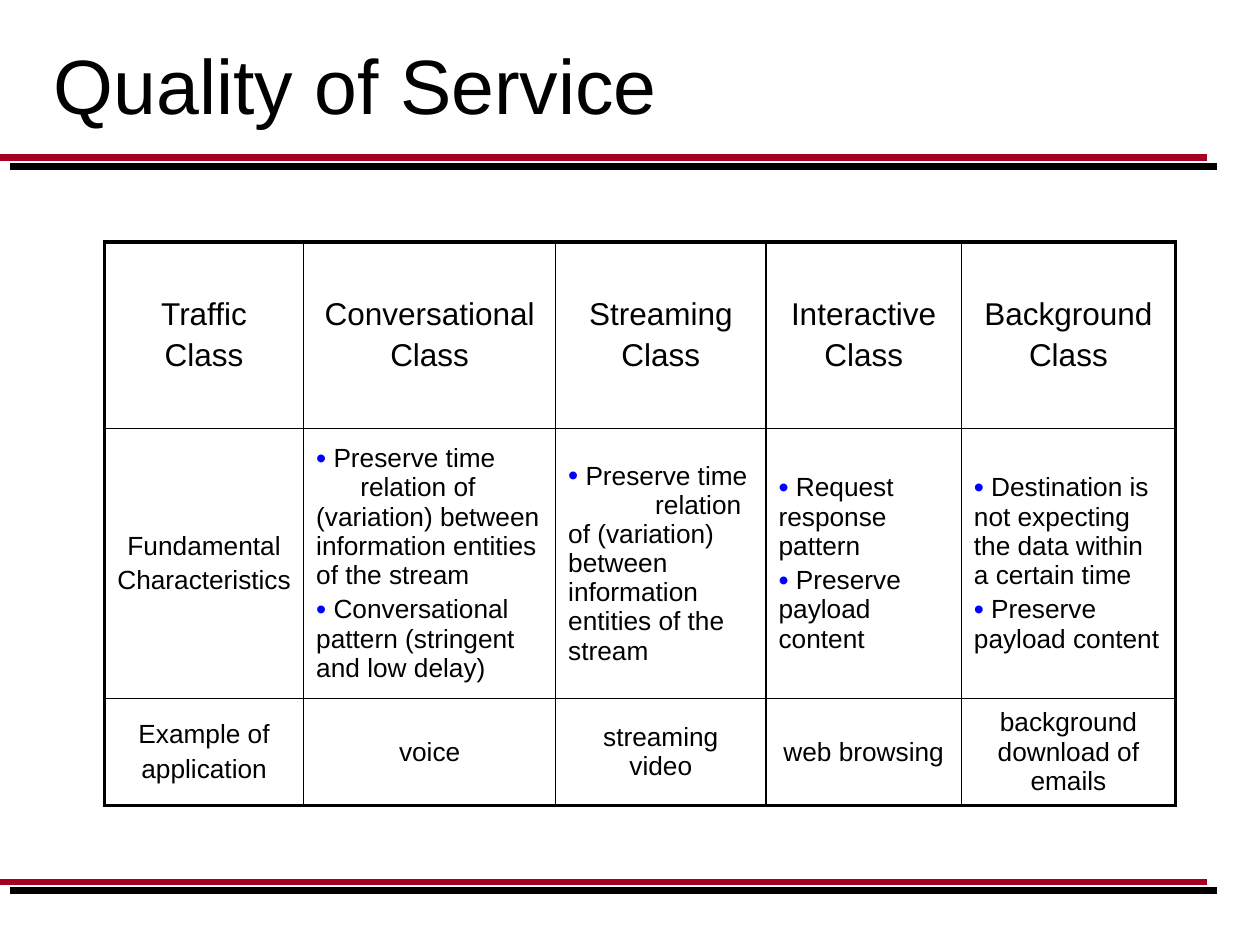
from dataclasses import dataclass

from lxml.etree import SubElement
from pptx import Presentation
from pptx.dml.color import RGBColor
from pptx.enum.shapes import MSO_CONNECTOR as Connector
from pptx.enum.text import MSO_ANCHOR as Anchor, PP_ALIGN as Align
from pptx.oxml.ns import qn
from pptx.util import Inches, Pt


@dataclass(frozen=True)
class Theme:
    """Colours, font and sizes of the slide."""
    font: str = "Arial"
    ink: str = "000000"
    accent: str = "0000FF"
    rule: str = "A50021"
    title_size: int = 44
    header_size: int = 18
    body_size: int = 15
    rule_width: int = 4
    frame_width: float = 2.25
    grid_width: float = 1


THEME = Theme()
COLUMN_WIDTHS = [1.58, 2, 1.67, 1.55, 1.7]
ROW_HEIGHTS = [1.48, 2.06, 0.83]
TAB_STOPS = {1: 0.35, 2: 0.69}
PRESERVE_TIME = (" Preserve time\v\trelation of (variation) between "
                 "information entities of the stream")
PRESERVE_PAYLOAD = " Preserve payload content"
TRAFFIC_CLASSES = [
    ["Traffic\nClass", "Conversational\nClass", "Streaming\nClass",
     "Interactive\nClass", "Background\nClass"],
    ["Fundamental\nCharacteristics",
     PRESERVE_TIME + "\n Conversational pattern (stringent and low delay)",
     PRESERVE_TIME,
     " Request response pattern\n" + PRESERVE_PAYLOAD,
     " Destination is not expecting the data within a certain time\n"
     + PRESERVE_PAYLOAD],
    ["Example of\napplication", "voice", "streaming video", "web browsing",
     "background download of emails"],
]


def add_node(parent, tag, **attributes):
    """Append a DrawingML element and return it."""
    return SubElement(parent, qn(tag), {key: str(value) for key, value in attributes.items()})


def style_font(paragraph, size):
    """Apply the theme font at the given size."""
    paragraph.font.name = THEME.font
    paragraph.font.size = Pt(size)
    paragraph.font.color.rgb = RGBColor.from_string(THEME.ink)


def add_rule(slide, y, color, shadowed=False):
    """Draw a horizontal rule, with or without a hard shadow."""
    rule = slide.shapes.add_connector(
        Connector.STRAIGHT, 0, Inches(y), Inches(9.58), Inches(y))
    rule.line.color.rgb = RGBColor.from_string(color)
    rule.line.width = Pt(THEME.rule_width)
    effects = add_node(rule._element.spPr, "a:effectLst")
    if shadowed:
        shadow = add_node(effects, "a:outerShdw", blurRad=0, dist=Pt(7.8),
                          dir=40 * 60000, algn="ctr", rotWithShape=0)
        add_node(shadow, "a:srgbClr", val=THEME.ink)


def add_title(slide, wording):
    """Place the slide title."""
    title = slide.shapes.add_textbox(Inches(0.33), 0, Inches(9.17), Inches(1.33))
    frame = title.text_frame
    frame.word_wrap = True
    frame.vertical_anchor = Anchor.MIDDLE
    frame.text = wording
    style_font(frame.paragraphs[0], THEME.title_size)


def add_bullet(paragraph, tab_stop):
    """Give a paragraph a coloured bullet and an optional tab stop."""
    properties = paragraph._p.get_or_add_pPr()
    add_node(add_node(properties, "a:buClr"), "a:srgbClr", val=THEME.accent)
    add_node(properties, "a:buSzPct", val=110000)
    add_node(properties, "a:buFont", typeface=THEME.font)
    add_node(properties, "a:buChar", char="•")
    if tab_stop:
        tabs = add_node(properties, "a:tabLst")
        add_node(tabs, "a:tab", pos=Inches(tab_stop), algn="l")


def add_borders(cell, row, column):
    """Draw cell borders, heavier along the table's outer frame."""
    outer_sides = {
        "a:lnL": column == 0,
        "a:lnR": column == len(COLUMN_WIDTHS) - 1,
        "a:lnT": row == 0,
        "a:lnB": row == len(ROW_HEIGHTS) - 1,
    }
    properties = cell._tc.get_or_add_tcPr()
    for side, is_outer in outer_sides.items():
        width = THEME.frame_width if is_outer else THEME.grid_width
        border = add_node(properties, side, w=Pt(width))
        add_node(add_node(border, "a:solidFill"), "a:srgbClr", val=THEME.ink)


def fill_cell(cell, row, column, wording):
    """Write and format one table cell."""
    add_borders(cell, row, column)
    cell.fill.background()
    cell.vertical_anchor = Anchor.MIDDLE
    cell.text_frame.text = wording
    size = THEME.header_size if row == 0 else THEME.body_size
    is_list = row == 1 and column > 0
    for paragraph in cell.text_frame.paragraphs:
        paragraph.alignment = Align.LEFT if is_list else Align.CENTER
        paragraph.space_before = Pt(size * 0.2)
        if is_list:
            add_bullet(paragraph, TAB_STOPS.get(column))
        style_font(paragraph, size)


def add_class_table(slide):
    """Build the table of traffic classes."""
    table = slide.shapes.add_table(
        len(ROW_HEIGHTS), len(COLUMN_WIDTHS), Inches(0.83), Inches(1.92),
        Inches(sum(COLUMN_WIDTHS)), Inches(sum(ROW_HEIGHTS))).table
    table.first_row = False
    table.horz_banding = False
    for column, width in zip(table.columns, COLUMN_WIDTHS):
        column.width = Inches(width)
    for row, height in zip(table.rows, ROW_HEIGHTS):
        row.height = Inches(height)
    for row, wordings in enumerate(TRAFFIC_CLASSES):
        for column, wording in enumerate(wordings):
            fill_cell(table.cell(row, column), row, column, wording)


def main():
    """Build and save the slide."""
    deck = Presentation()
    deck.slide_width, deck.slide_height = Inches(10), Inches(7.5)
    slide = deck.slides.add_slide(deck.slide_layouts[6])
    for y in (1.25, 7):
        add_rule(slide, y, THEME.accent, shadowed=True)
        add_rule(slide, y, THEME.rule)
    add_title(slide, "Quality of Service")
    add_class_table(slide)
    deck.save("out.pptx")


if __name__ == "__main__":
    main()
